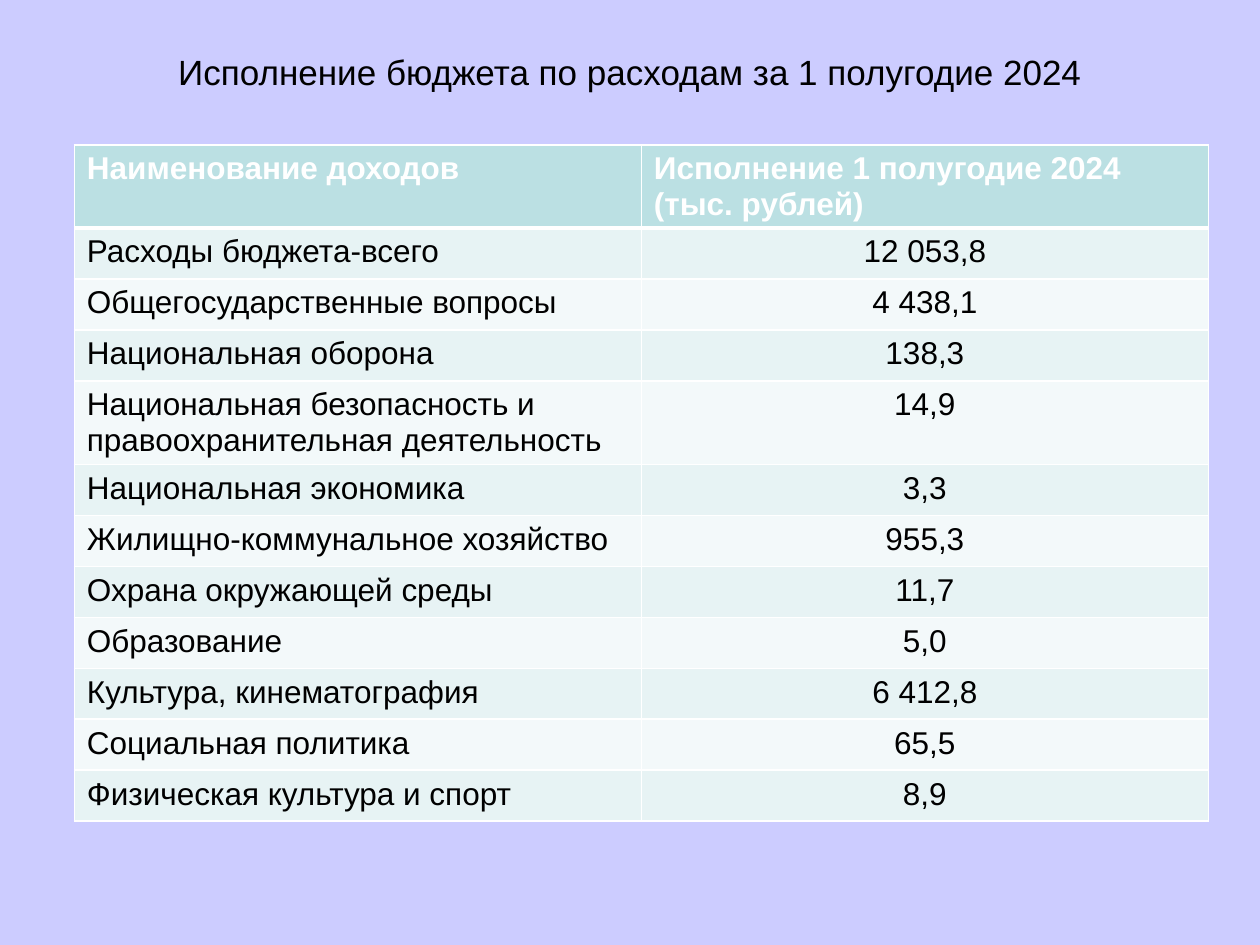
from lxml import etree
from pptx import Presentation
from pptx.dml.color import RGBColor
from pptx.enum.text import MSO_ANCHOR, PP_ALIGN
from pptx.oxml.ns import qn
from pptx.util import Inches, Pt

LEFT, CENTER = PP_ALIGN.LEFT, PP_ALIGN.CENTER
MIDDLE = MSO_ANCHOR.MIDDLE

TITLE = "Исполнение бюджета по расходам за 1 полугодие 2024"
HEADER = ("Наименование доходов", "Исполнение 1 полугодие 2024 (тыс. рублей)")
EXPENSES = [
    ("Расходы бюджета-всего", "12 053,8"),
    ("Общегосударственные вопросы", "4 438,1"),
    ("Национальная оборона", "138,3"),
    ("Национальная безопасность и правоохранительная деятельность", "14,9"),
    ("Национальная экономика", "3,3"),
    ("Жилищно-коммунальное хозяйство", "955,3"),
    ("Охрана окружающей среды", "11,7"),
    ("Образование", "5,0"),
    ("Культура, кинематография", "6 412,8"),
    ("Социальная политика", "65,5"),
    ("Физическая культура и спорт", "8,9"),
]
COLORS = {
    "background": "CCCCFF",
    "text": "000000",
    "header_text": "FFFFFF",
    "border": "FFFFFF",
    "header": "BBE0E3",
    "odd_row": "E7F3F4",
    "even_row": "F3F9FA",
}
TITLE_FONT = {"name": "Arial", "size": Pt(20), "bold": False}
HEADER_FONT = {"name": "Arial", "size": Pt(18), "bold": True}
BODY_FONT = {**HEADER_FONT, "bold": False}
COLUMN_WIDTH, ROW_HEIGHT = 4.5, 0.405


def color(name):
    return RGBColor.from_string(COLORS[name])


def write(text_frame, text, font_format, color_name, alignment):
    text_frame.text = text
    paragraph = text_frame.paragraphs[0]
    paragraph.alignment = alignment
    font = paragraph.runs[0].font
    for attribute, value in font_format.items():
        setattr(font, attribute, value)
    font.color.rgb = color(color_name)


def add_borders(cell, widths):
    """Draw cell borders; widths maps L, R, T, B (in that order) to points."""
    properties = cell._tc.get_or_add_tcPr()
    for side, width in widths.items():
        line = etree.SubElement(properties, qn(f"a:ln{side}"), w=str(Pt(width)))
        fill = etree.SubElement(line, qn("a:solidFill"))
        etree.SubElement(fill, qn("a:srgbClr"), val=COLORS["border"])


def add_title(slide):
    title = slide.shapes.title
    title.left, title.top = Inches(0.5), Inches(0.3)
    title.width, title.height = Inches(9), Inches(0.54)
    title.text_frame.vertical_anchor = MIDDLE
    write(title.text_frame, TITLE, TITLE_FONT, "text", CENTER)


def add_expense_table(slide):
    rows = [HEADER, *EXPENSES]
    table = slide.shapes.add_table(
        len(rows), len(HEADER), Inches(0.59), Inches(1.15),
        Inches(COLUMN_WIDTH * len(HEADER)), Inches(ROW_HEIGHT * len(rows)),
    ).table
    for row_index, values in enumerate(rows):
        is_header = row_index == 0
        fill_name = "header" if is_header else ("even_row", "odd_row")[row_index % 2]
        font_format = HEADER_FONT if is_header else BODY_FONT
        text_color = "header_text" if is_header else "text"
        widths = {"L": 1, "R": 1, "T": 3 if row_index == 1 else 1, "B": 3 if is_header else 1}
        for column_index, value in enumerate(values):
            cell = table.cell(row_index, column_index)
            alignment = CENTER if column_index and not is_header else LEFT
            write(cell.text_frame, value, font_format, text_color, alignment)
            add_borders(cell, widths)
            cell.fill.solid()
            cell.fill.fore_color.rgb = color(fill_name)


def main():
    presentation = Presentation()
    presentation.slide_width, presentation.slide_height = Inches(10), Inches(7.5)
    slide = presentation.slides.add_slide(presentation.slide_layouts.get_by_name("Title Only"))
    slide.background.fill.solid()
    slide.background.fill.fore_color.rgb = color("background")
    add_title(slide)
    add_expense_table(slide)
    presentation.save("out.pptx")


if __name__ == "__main__":
    main()
